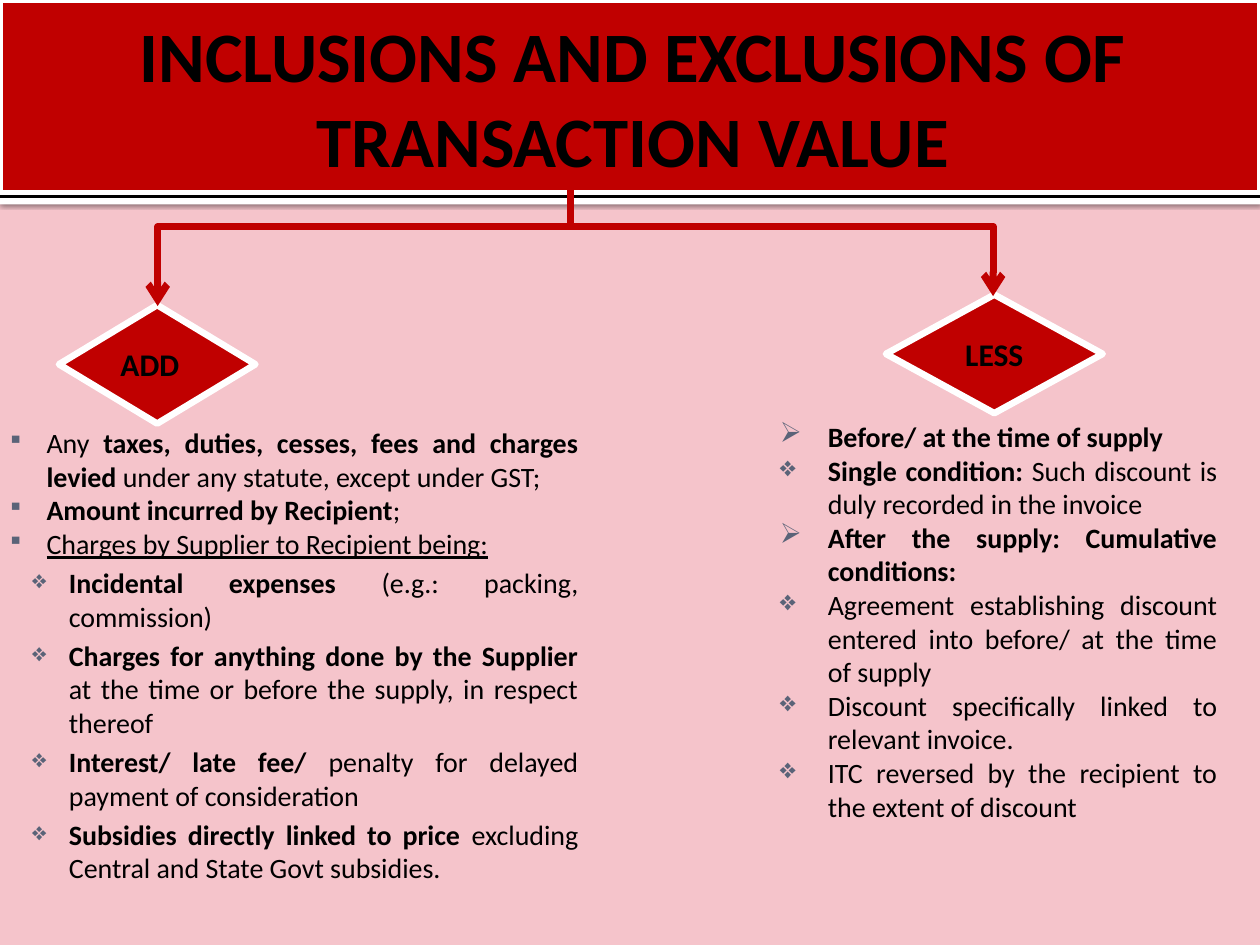
from lxml.etree import SubElement
from pptx import Presentation
from pptx.dml.color import RGBColor
from pptx.enum.shapes import MSO_CONNECTOR as Link, MSO_SHAPE as Shape
from pptx.enum.text import MSO_ANCHOR as Anchor, PP_ALIGN as Align
from pptx.oxml.ns import qn
from pptx.util import Cm, Pt

COLORS = {
    "background": "F5C4CB",
    "red": "C00000",
    "white": "FFFFFF",
    "black": "000000",
    "bullet": "5A6378",
}
WIDTH, HEIGHT = 25.4, 19.05
TRUNK_X, BRANCH_Y = 11.51, 4.57

# Bullet styles: character, size in percent, left margin, hanging indent, space before
SQUARE = ("▪", 80, 0.79, 0.79, 0)
SUB_DIAMOND = ("❖", 90, 1.24, 0.74, 3.2)
DIAMOND = ("❖", 100, 0.97, 0.97, 0)
ARROW = ("➢", 100, 0.97, 0.97, 0)

# Each item: bullet style, then (text, style) spans with b = bold, u = underlined
ADDITIONS = [
    (SQUARE, ("Any ", ""), ("taxes, duties, cesses, fees and charges levied ", "b"),
     ("under any statute, except under GST;", "")),
    (SQUARE, ("Amount incurred by Recipient", "b"), (";", "")),
    (SQUARE, ("Charges by Supplier to Recipient being:", "u")),
    (SUB_DIAMOND, ("Incidental expenses ", "b"), ("(e.g.: packing, commission)", "")),
    (SUB_DIAMOND, ("Charges for anything done by the Supplier ", "b"),
     ("at the time or before the supply, in respect thereof", "")),
    (SUB_DIAMOND, ("Interest/ late fee/ ", "b"),
     ("penalty for delayed payment of consideration", "")),
    (SUB_DIAMOND, ("Subsidies directly linked to price ", "b"),
     ("excluding Central and State Govt subsidies.", "")),
]
DEDUCTIONS = [
    (ARROW, ("Before/ at the time of supply", "b")),
    (DIAMOND, ("Single condition: ", "b"),
     ("Such discount is duly recorded in the invoice", "")),
    (ARROW, ("After the supply: Cumulative conditions:", "b")),
    (DIAMOND, ("Agreement establishing discount entered into before/ at the time of supply", "")),
    (DIAMOND, ("Discount specifically linked to relevant invoice.", "")),
    (DIAMOND, ("ITC reversed by the recipient to the extent of discount", "")),
]


def rgb(name):
    return RGBColor.from_string(COLORS[name])


class SlideBuilder:
    def __init__(self, slide, font="Calibri"):
        self.slide = slide
        self.font = font
        fill = slide.background.fill
        fill.solid()
        fill.fore_color.rgb = rgb("background")

    def style(self, para, size, bold=None):
        para.font.name = self.font
        para.font.size = Pt(size)
        para.font.bold = bold
        para.font.color.rgb = rgb("black")

    def shape(self, kind, place, fill, border=0):
        shape = self.slide.shapes.add_shape(kind, *map(Cm, place))
        shape.shadow.inherit = False
        shape.fill.solid()
        shape.fill.fore_color.rgb = rgb(fill)
        if border:
            shape.line.color.rgb = rgb("white")
            shape.line.width = Pt(border)
        else:
            shape.line.fill.background()
        return shape

    def label(self, kind, place, text, size, border, align=Align.CENTER):
        shape = self.shape(kind, place, "red", border)
        frame = shape.text_frame
        frame.word_wrap = True
        frame.vertical_anchor = Anchor.MIDDLE
        para = frame.paragraphs[0]
        para.text = text
        para.alignment = align
        self.style(para, size, bold=True)
        return shape

    def strip(self, place):
        """Add a white strip that casts a soft shadow straight down."""
        strip = self.shape(Shape.RECTANGLE, place, "white")
        effects = strip._element.spPr.find(qn("a:effectLst"))
        shadow = SubElement(effects, qn("a:outerShdw"), blurRad=str(Pt(2.5)),
                            dist=str(Pt(0.8)), dir="5400000", rotWithShape="0")
        color = SubElement(shadow, qn("a:srgbClr"), val=COLORS["black"])
        SubElement(color, qn("a:alpha"), val="60000")

    def connector(self, start, end, bent=False):
        """Add a plain line, or a line with one corner and an arrowhead."""
        kind = Link.ELBOW if bent else Link.STRAIGHT
        connector = self.slide.shapes.add_connector(kind, *map(Cm, start + end))
        connector.line.color.rgb = rgb("red")
        connector.line.width = Pt(4)
        properties = connector._element.spPr
        if bent:
            properties.find(qn("a:prstGeom")).set("prst", "bentConnector2")
            SubElement(properties.find(qn("a:ln")), qn("a:tailEnd"), type="arrow")
        SubElement(properties, qn("a:effectLst"))

    def bullet(self, para, bullet):
        char, size, margin, hanging, before = bullet
        para.space_before = Pt(before)
        properties = para._p.get_or_add_pPr()
        properties.set("marL", str(Cm(margin)))
        properties.set("indent", str(-Cm(hanging)))
        color = SubElement(properties, qn("a:buClr"))
        SubElement(color, qn("a:srgbClr"), val=COLORS["bullet"])
        SubElement(properties, qn("a:buSzPct"), val=str(size * 1000))
        SubElement(properties, qn("a:buChar"), char=char)

    def bullet_list(self, place, items, margin_left=0.25, margin_top=0.13):
        box = self.slide.shapes.add_textbox(*map(Cm, place))
        frame = box.text_frame
        frame.word_wrap = True
        frame.margin_left, frame.margin_top = Cm(margin_left), Cm(margin_top)
        for index, (bullet, *spans) in enumerate(items):
            para = frame.add_paragraph() if index else frame.paragraphs[0]
            para.alignment = Align.JUSTIFY
            self.bullet(para, bullet)
            self.style(para, 16)
            for text, style in spans:
                span = para.add_run()
                span.text = text
                span.font.bold = style == "b"
                span.font.underline = style == "u"


def main():
    deck = Presentation()
    deck.slide_width, deck.slide_height = Cm(WIDTH), Cm(HEIGHT)
    page = SlideBuilder(deck.slides.add_slide(deck.slide_layouts[6]))

    page.strip((0, 3.99, WIDTH, 0.13))
    page.shape(Shape.RECTANGLE, (0, 0, WIDTH, 3.99), "black")
    title = page.label(Shape.RECTANGLE, (0, 0, WIDTH, 3.89),
                       "INCLUSIONS AND EXCLUSIONS OF TRANSACTION VALUE", 40.5, 3)
    title.text_frame.margin_right = Cm(0.13)

    page.bullet_list((0, 8.33, 11.91, 10.31), ADDITIONS, 0.15, 0.25)
    page.connector((TRUNK_X, 3.76), (TRUNK_X, BRANCH_Y))
    page.label(Shape.DIAMOND, (1.19, 6.15, 3.96, 2.39), "ADD", 18, 3.78, Align.LEFT)
    page.label(Shape.DIAMOND, (17.86, 5.94, 4.37, 2.39), "LESS", 18, 3.78)
    for tip in ((20.02, 5.97), (3.18, 6.17)):
        page.connector((TRUNK_X, BRANCH_Y), tip, bent=True)
    page.bullet_list((15.47, 8.33, 9.32, 8.46), DEDUCTIONS)

    deck.save("out.pptx")


if __name__ == "__main__":
    main()
